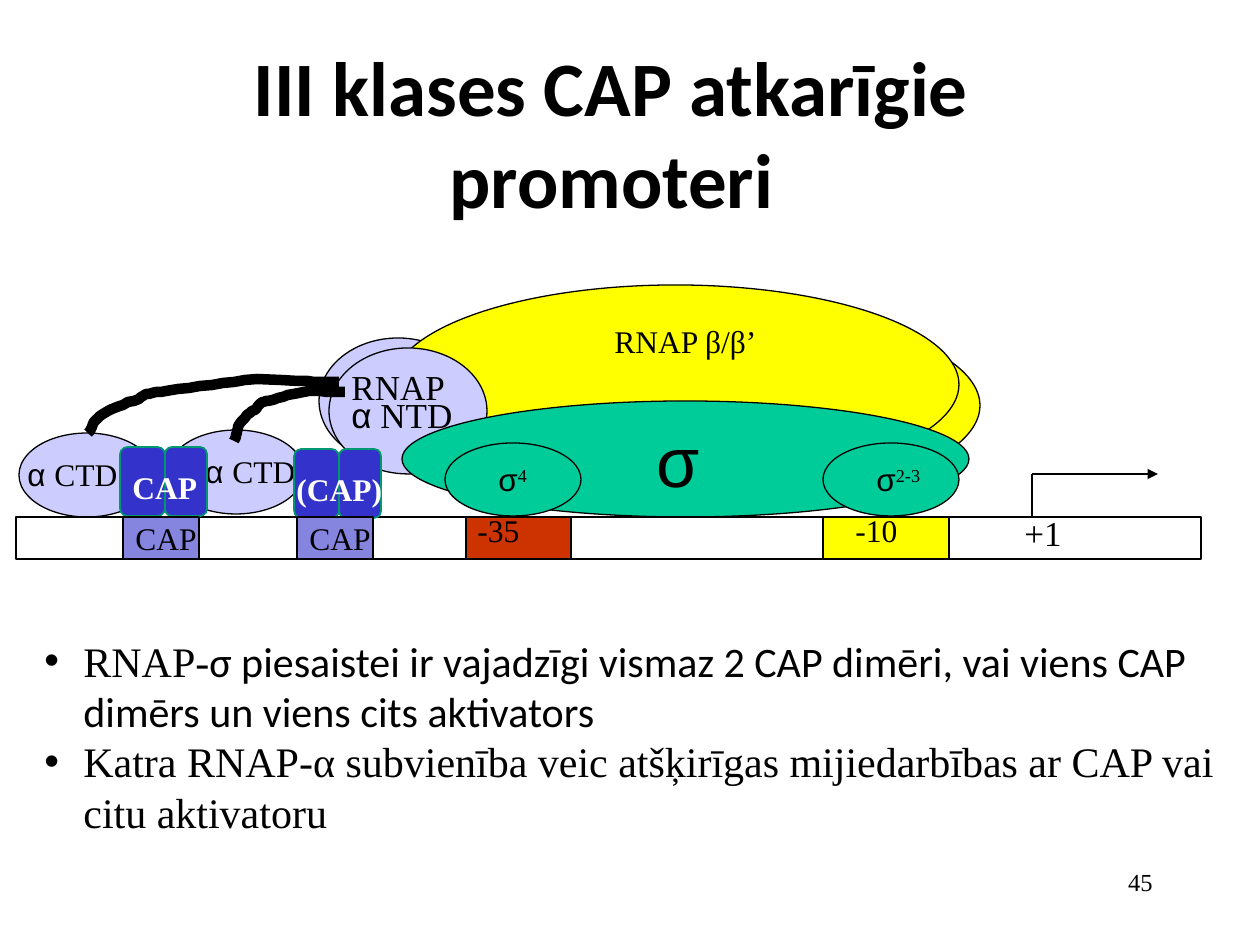
from dataclasses import dataclass
from itertools import accumulate
from lxml import etree
from pptx import Presentation
from pptx.dml.color import RGBColor as Rgb
from pptx.enum.shapes import MSO_CONNECTOR as Connector, MSO_SHAPE as Shape
from pptx.enum.text import MSO_ANCHOR as Anchor, MSO_AUTO_SIZE as Fit, PP_ALIGN as Align
from pptx.oxml.ns import qn
from pptx.util import Emu, Pt


@dataclass(frozen=True)
class Theme:
    ink: str = "000000"
    white: str = "FFFFFF"
    polymerase: str = "FFFF00"
    alpha: str = "CCCCFF"
    sigma: str = "00CC99"
    box35: str = "CC3300"
    cap: str = "3333CC"
    cap_edge: str = "009771"
    cap_site: str = "8585E0"
    serif: str = "Times New Roman"
    sans: str = "Arial"
    body: str = "Calibri"
    title_size: int = 44
    symbol_size: int = 40
    body_size: int = 24
    large_size: int = 20
    label_size: int = 18
    number_size: int = 14


theme = Theme()
SCALE = 914400 / 126


def add_figure(kind, place, fill, edge=theme.ink, weight=0.75):
    figure = slide.shapes.add_shape(kind, *[Emu(round(v * SCALE)) for v in place])
    figure.shadow.inherit = False
    figure.fill.solid()
    figure.fill.fore_color.rgb = Rgb.from_string(fill)
    figure.line.color.rgb = Rgb.from_string(edge)
    figure.line.width = Pt(weight)
    return figure


def write(paragraph, runs, size, color=theme.ink, bold=False):
    for text, face, *baseline in runs:
        run = paragraph.add_run()
        run.text = text
        for key, value in {"name": face, "size": Pt(size), "bold": bold}.items():
            setattr(run.font, key, value)
        run.font.color.rgb = Rgb.from_string(color)
        if baseline:
            run.font._element.set("baseline", str(baseline[0]))


deck = Presentation()
deck.slide_width, deck.slide_height = [Emu(round(v * SCALE)) for v in (1260, 945)]
slide = deck.slides.add_slide(deck.slide_layouts[5])

title = slide.shapes.title
for side, value in zip(("left", "top", "width", "height"), (76, 53, 1071, 158)):
    setattr(title, side, Emu(round(value * SCALE)))
for key, value in {"auto_size": Fit.NONE, "vertical_anchor": Anchor.MIDDLE, "word_wrap": True}.items():
    setattr(title.text_frame, key, value)
title.text_frame.paragraphs[0].alignment = Align.CENTER
write(title.text_frame.paragraphs[0], [("III klases CAP atkarīgie promoteri", theme.body)],
      theme.title_size, bold=True)

for place, fill in [
    ((413, 306, 567, 199), theme.polymerase),
    ((319, 338, 158, 126), theme.alpha),
    ((168, 430, 136, 84), theme.alpha),
    ((392, 285, 567, 199), theme.polymerase),
    ((329, 348, 158, 126), theme.alpha),
    ((402, 401, 567, 116), theme.sigma),
    ((445, 443, 136, 73), theme.sigma),
    ((823, 443, 136, 73), theme.sigma),
    ((19, 433, 136, 84), theme.alpha),
]:
    add_figure(Shape.OVAL, place, fill)

dna_widths = [450, 105, 252, 126, 252]
dna_fills = [theme.white, theme.box35, theme.white, theme.polymerase, theme.white]
for left, width, fill in zip(accumulate([16] + dna_widths), dna_widths, dna_fills):
    add_figure(Shape.RECTANGLE, (left, 517, width, 42), fill)

for end, arrow in [((1032, 517), False), ((1158, 474), True)]:
    start_site = slide.shapes.add_connector(
        Connector.STRAIGHT, *[Emu(round(v * SCALE)) for v in (1032, 474, *end)])
    start_site.line.color.rgb = Rgb.from_string(theme.ink)
    start_site.line.width = Pt(0.75)
    if arrow:
        etree.SubElement(start_site.line._get_or_add_ln(), qn("a:tailEnd"), type="triangle")
    etree.SubElement(start_site._element.spPr, qn("a:effectLst"))

linkers = [
    [(88, 433), (93, 427), (93, 422), (100, 416), (108, 410), (125, 403), (139, 399),
     (144, 393), (151, 393), (166, 391), (197, 387), (226, 382), (257, 379),
     (334, 382), (306, 382), (339, 382)],
    [(234, 441), (237, 435), (237, 430), (239, 425), (243, 418), (251, 412), (257, 408),
     (260, 403), (262, 402), (268, 401), (282, 397), (295, 393), (309, 391),
     (343, 392), (330, 392), (345, 392)],
]
STEPS = 8
for knots in linkers:
    track = []
    for first in range(0, len(knots) - 1, 3):
        for step in range(1, STEPS + 1):
            t = step / STEPS
            weights = ((1 - t) ** 3, 3 * t * (1 - t) ** 2, 3 * t * t * (1 - t), t ** 3)
            track.append([sum(w * v for w, v in zip(weights, axis))
                          for axis in zip(*knots[first:first + 4])])
    pen = slide.shapes.build_freeform(*knots[0], scale=SCALE)
    pen.add_line_segments(track, close=False)
    linker = pen.convert_to_shape()
    linker.shadow.inherit = False
    linker.fill.background()
    linker.line.color.rgb = Rgb.from_string(theme.ink)
    linker.line.width = Pt(6)

ctd = [("α ", theme.sans), ("CTD", theme.serif)]
ntd = [("α", theme.sans), (" NTD", theme.serif)]
label, large = theme.label_size, theme.large_size
for place, size, lines in [
    ((465, 505, 95, 63), label, [[("-35", theme.serif)]]),
    ((843, 505, 84, 63), label, [[("-10", theme.serif)]]),
    ((1012, 505, 158, 54), large, [[("+1", theme.serif)]]),
    ((486, 454, 73, 63), label, [[("σ", theme.sans), ("4", theme.serif, 30000)]]),
    ((864, 454, 105, 63), label, [[("σ", theme.sans), ("2-3", theme.serif, 30000)]]),
    ((644, 411, 105, 97), theme.symbol_size, [[("σ", theme.sans)]]),
    ((339, 359, 347, 79), large, [[("RNAP", theme.serif)], ntd]),
    ((15, 449, 168, 63), label, [ctd]),
    ((193, 446, 168, 63), label, [ctd]),
    ((602, 316, 315, 50), label, [[("RNAP β/β’", theme.serif)]]),
]:
    frame = slide.shapes.add_textbox(*[Emu(round(v * SCALE)) for v in place]).text_frame
    frame.word_wrap = True
    write(frame.paragraphs[0], lines[0], size)
    for line in lines[1:]:
        following = frame.add_paragraph()
        for key, value in {"line_spacing": 0.1, "space_before": Pt(size / 2)}.items():
            setattr(following, key, value)
        write(following, line, size)

for left, top, caption, caption_place in [
    (120, 447, "CAP", (120, 462, 101, 50)),
    (294, 449, "(CAP)", (284, 464, 118, 50)),
]:
    for offset, width in [(0, 45), (45, 42)]:
        add_figure(Shape.ROUNDED_RECTANGLE, (left + offset, top, width, 69),
                   theme.cap, theme.cap_edge, 1)
    dimer = slide.shapes.add_textbox(*[Emu(round(v * SCALE)) for v in caption_place]).text_frame
    dimer.word_wrap = True
    write(dimer.paragraphs[0], [(caption, theme.serif)], label, theme.white, True)
    site = add_figure(Shape.RECTANGLE, (left + 3, 517, 76, 42), theme.cap_site).text_frame
    for key, value in {"word_wrap": False, "vertical_anchor": Anchor.MIDDLE}.items():
        setattr(site, key, value)
    site.paragraphs[0].alignment = Align.LEFT
    write(site.paragraphs[0], [("CAP", theme.serif)], label)

points = slide.shapes.add_textbox(*[Emu(round(v * SCALE)) for v in (32, 629, 1215, 217)]).text_frame
points.word_wrap = True
for index, runs in enumerate([
    [("RNAP-", theme.serif),
     ("σ piesaistei ir vajadzīgi vismaz 2 CAP dimēri, vai viens CAP dimērs un viens cits aktivators",
      theme.body)],
    [("Katra RNAP-α subvienība veic atšķirīgas mijiedarbības ar CAP vai citu aktivatoru", theme.serif)],
]):
    point = points.add_paragraph() if index else points.paragraphs[0]
    settings = point._p.get_or_add_pPr()
    for key, value in {"marL": 39, "indent": -39}.items():
        settings.set(key, str(round(value * SCALE)))
    etree.SubElement(settings, qn("a:buFont"), typeface=theme.sans)
    etree.SubElement(settings, qn("a:buChar"), char="•")
    write(point, runs, theme.body_size)

number = slide.shapes.add_textbox(*[Emu(round(v * SCALE)) for v in (903, 861, 262, 63)]).text_frame
number.word_wrap = True
number.paragraphs[0].alignment = Align.RIGHT
write(number.paragraphs[0], [("45", theme.serif)], theme.number_size)

deck.save("out.pptx")
